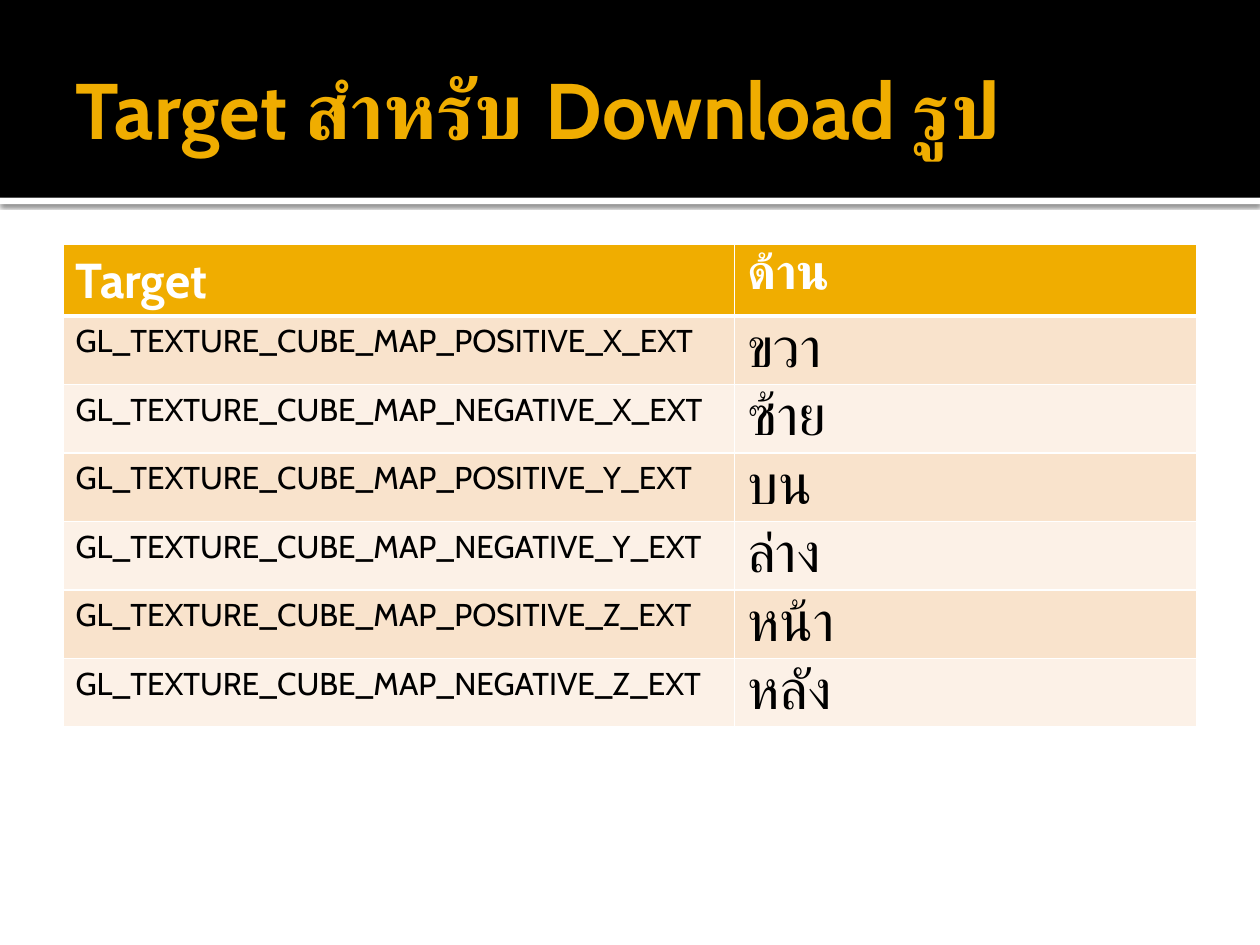
from lxml import etree
from pptx import Presentation
from pptx.dml.color import RGBColor
from pptx.enum.shapes import MSO_SHAPE
from pptx.enum.text import MSO_ANCHOR
from pptx.oxml import parse_xml
from pptx.oxml.ns import nsdecls, qn
from pptx.util import Pt

RECTANGLE = MSO_SHAPE.RECTANGLE
MIDDLE = MSO_ANCHOR.MIDDLE

BLACK = RGBColor(0x00, 0x00, 0x00)
WHITE = RGBColor(0xFF, 0xFF, 0xFF)
GOLD = RGBColor(0xF0, 0xAD, 0x00)
PEACH = RGBColor(0xF9, 0xE3, 0xCC)
CREAM = RGBColor(0xFC, 0xF1, 0xE7)

TITLE = {"size": Pt(45), "name": "Cabin", "bold": True}
HEADER = {"size": Pt(28), "name": "Cabin", "bold": True}
TARGET = {"size": Pt(18), "name": "Cabin", "bold": False}
SIDE = {"size": Pt(32), "name": "Cabin", "bold": False}

COLUMN_WIDTHS = (383.76, 264.24)
ROW_HEIGHT = 29.2
# Takes up the deep descent of the Thai letters, so that body rows stay compact
SIDE_MARGIN_BOTTOM = -2.9
HEADINGS = ("Target", "ด้าน")
SIDES = (
    ("POSITIVE_X", "ขวา"),
    ("NEGATIVE_X", "ซ้าย"),
    ("POSITIVE_Y", "บน"),
    ("NEGATIVE_Y", "ล่าง"),
    ("POSITIVE_Z", "หน้า"),
    ("NEGATIVE_Z", "หลัง"),
)


def write_text(frame, text, font_format, color):
    span = frame.paragraphs[0].add_run()
    span.text = text
    for name, value in font_format.items():
        setattr(span.font, name, value)
    span.font.color.rgb = color


def add_band(page, top, height, color):
    band = page.shapes.add_shape(RECTANGLE, Pt(0), Pt(top), Pt(720), Pt(height))
    band.shadow.inherit = False
    band.fill.solid()
    band.fill.fore_color.rgb = color
    band.line.fill.background()
    return band


def add_shadow(shape):
    effects = shape._element.spPr.find(qn("a:effectLst"))
    effects.append(parse_xml(
        f'<a:outerShdw {nsdecls("a")} blurRad="{Pt(2.5)}" dist="{Pt(0.8)}" '
        'dir="5400000" algn="tl" rotWithShape="0">'
        '<a:srgbClr val="000000"><a:alpha val="60000"/></a:srgbClr>'
        '</a:outerShdw>'))


def add_title(page, text):
    box = page.shapes.add_textbox(Pt(36), Pt(12.24), Pt(648), Pt(98.64))
    frame_format = {
        "word_wrap": True, "vertical_anchor": MIDDLE,
        "margin_left": Pt(7.2), "margin_right": Pt(3.6),
        "margin_top": Pt(3.6), "margin_bottom": Pt(3.6),
    }
    for name, value in frame_format.items():
        setattr(box.text_frame, name, value)
    write_text(box.text_frame, text, TITLE, GOLD)


def set_borders(cell, widths):
    properties = cell._tc.get_or_add_tcPr()
    for position, (side, width) in enumerate(widths.items()):
        line = etree.Element(qn(f"a:ln{side}"), w=str(Pt(width)))
        fill = etree.SubElement(line, qn("a:solidFill"))
        etree.SubElement(fill, qn("a:srgbClr"), val=str(WHITE))
        properties.insert(position, line)


def add_target_table(page):
    rows = [HEADINGS]
    rows += [(f"GL_TEXTURE_CUBE_MAP_{axis}_EXT", side) for axis, side in SIDES]
    table = page.shapes.add_table(
        len(rows), len(COLUMN_WIDTHS), Pt(36), Pt(139.68),
        Pt(sum(COLUMN_WIDTHS)), Pt(ROW_HEIGHT * len(rows))).table
    for column, width in zip(table.columns, COLUMN_WIDTHS):
        column.width = Pt(width)

    for row_index, texts in enumerate(rows):
        is_header = row_index == 0
        row_fill = GOLD if is_header else (CREAM, PEACH)[row_index % 2]
        text_color = WHITE if is_header else BLACK
        formats = (HEADER, HEADER) if is_header else (TARGET, SIDE)
        # A thick rule separates the header from the first body row
        borders = {"L": 1, "R": 1, "T": 3 if row_index == 1 else 1,
                   "B": 3 if is_header else 1}
        for column_index, text in enumerate(texts):
            cell = table.cell(row_index, column_index)
            cell.fill.solid()
            cell.fill.fore_color.rgb = row_fill
            set_borders(cell, borders)
            write_text(cell.text_frame, text, formats[column_index], text_color)
            if formats[column_index] is SIDE:
                cell.margin_bottom = Pt(SIDE_MARGIN_BOTTOM)


def main():
    deck = Presentation()
    deck.slide_width, deck.slide_height = Pt(720), Pt(540)
    page = deck.slides.add_slide(deck.slide_layouts[6])

    # Title band with a white strip beneath it
    add_shadow(add_band(page, 113.04, 3.6, WHITE))
    add_band(page, 0, 113.04, BLACK)
    add_title(page, "Target สำหรับ Download รูป")

    # Cube map targets and their sides
    add_target_table(page)
    deck.save("out.pptx")


if __name__ == "__main__":
    main()
